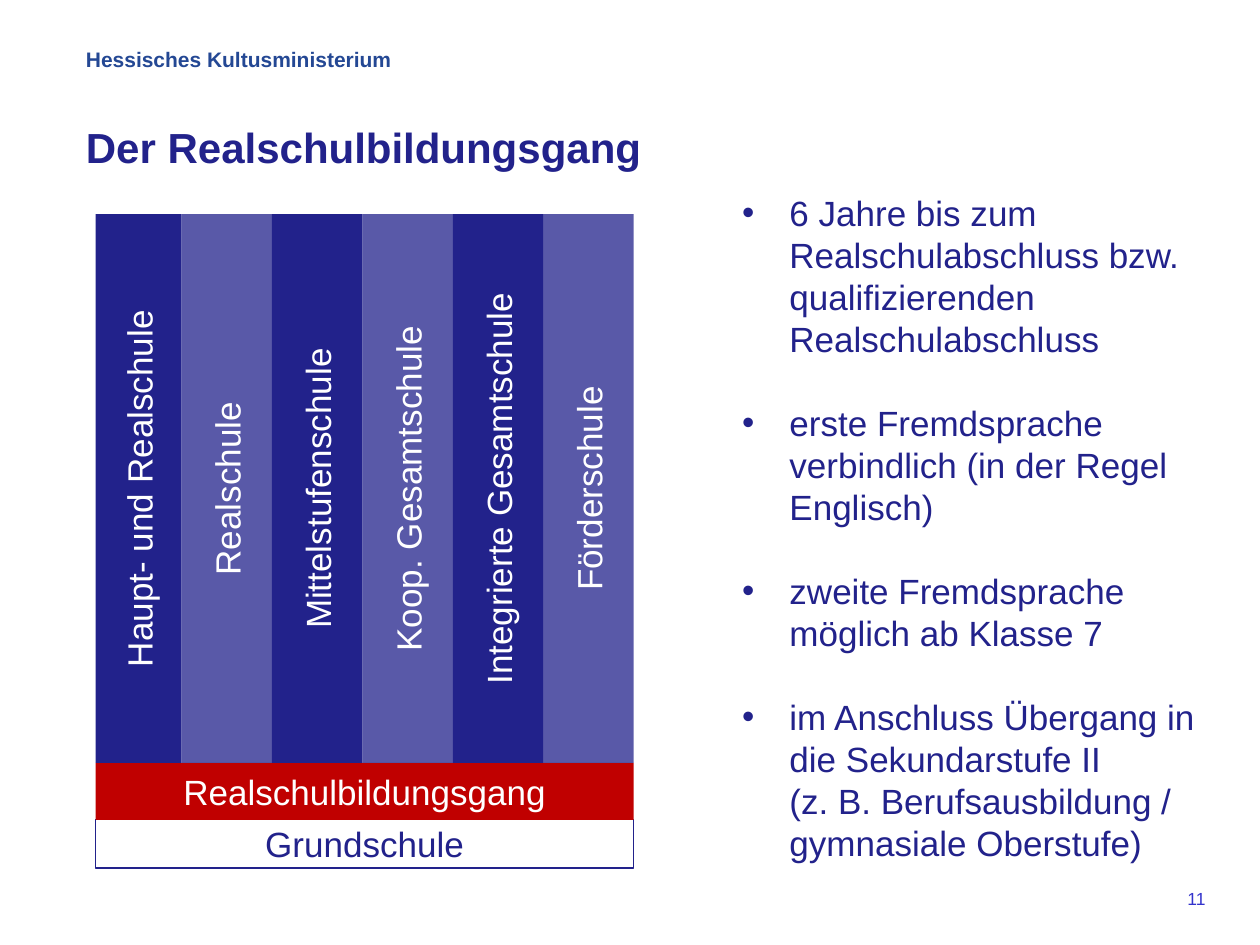
from dataclasses import dataclass

from lxml import etree
from pptx import Presentation
from pptx.dml.color import RGBColor
from pptx.enum.shapes import MSO_SHAPE
from pptx.enum.text import MSO_ANCHOR, PP_ALIGN
from pptx.oxml.ns import qn
from pptx.util import Pt

RECTANGLE = MSO_SHAPE.RECTANGLE
LEFT, CENTER, RIGHT = PP_ALIGN.LEFT, PP_ALIGN.CENTER, PP_ALIGN.RIGHT
TOP, MIDDLE = MSO_ANCHOR.TOP, MSO_ANCHOR.MIDDLE
FONT = "Arial"
NAVY, RED, WHITE = "22228B", "C00000", "FFFFFF"


@dataclass
class Label:
    text: str
    left: float
    top: float
    width: float
    height: float
    size: float
    color: str = NAVY
    bold: bool = False
    align: PP_ALIGN = LEFT


@dataclass
class Block:
    label: Label
    fill: str
    opacity: int = 100
    line: str = ""
    vertical: bool = False


def rgb(color: str) -> RGBColor:
    return RGBColor.from_string(color)


def format_paragraph(paragraph, label: Label) -> None:
    paragraph.alignment = label.align
    for run in paragraph.runs:
        run.font.name = FONT
        run.font.size = Pt(label.size)
        run.font.bold = label.bold
        run.font.color.rgb = rgb(label.color)


def add_label(shapes, label: Label):
    box = shapes.add_textbox(Pt(label.left), Pt(label.top), Pt(label.width), Pt(label.height))
    text_frame = box.text_frame
    text_frame.word_wrap = True
    text_frame.vertical_anchor = TOP
    text_frame.text = label.text
    for paragraph in text_frame.paragraphs:
        format_paragraph(paragraph, label)
    return box


def add_bullets(shapes, label: Label) -> None:
    box = add_label(shapes, label)
    for index, paragraph in enumerate(box.text_frame.paragraphs):
        paragraph.line_spacing = Pt(24)
        if index:
            paragraph.space_before = Pt(24)
        properties = paragraph._p.get_or_add_pPr()
        properties.set("marL", str(Pt(27)))
        properties.set("indent", str(Pt(-27)))
        etree.SubElement(properties, qn("a:buFont")).set("typeface", FONT)
        etree.SubElement(properties, qn("a:buChar")).set("char", "•")


def add_block(shapes, block: Block) -> None:
    label = block.label
    shape = shapes.add_shape(
        RECTANGLE, Pt(label.left), Pt(label.top), Pt(label.width), Pt(label.height)
    )
    shape.shadow.inherit = False
    shape.fill.solid()
    shape.fill.fore_color.rgb = rgb(block.fill)
    if block.opacity < 100:
        color = shape.fill._xPr.find(qn("a:solidFill"))[0]
        etree.SubElement(color, qn("a:alpha")).set("val", str(block.opacity * 1000))
    if block.line:
        shape.line.color.rgb = rgb(block.line)
        shape.line.width = Pt(0.75)
    else:
        shape.line.fill.background()
    text_frame = shape.text_frame
    text_frame.word_wrap = True
    text_frame.vertical_anchor = MIDDLE
    text_frame.text = label.text
    format_paragraph(text_frame.paragraphs[0], label)
    if block.vertical:
        text_frame._txBody.bodyPr.set("vert", "vert270")


# Diagram grid: a slightly narrower first column, then equal ones
SCHOOLS = [
    "Haupt- und Realschule", "Realschule", "Mittelstufenschule",
    "Koop. Gesamtschule", "Integrierte Gesamtschule", "Förderschule",
]
DIAGRAM_LEFT, DIAGRAM_TOP, DIAGRAM_WIDTH = 54.7, 122.4, 307.4
FIRST_WIDTH = 49
COLUMN_WIDTH = (DIAGRAM_WIDTH - FIRST_WIDTH) / (len(SCHOOLS) - 1)
TRACK_TOP, PRIMARY_TOP, DIAGRAM_BOTTOM = 436, 468.5, 496

BULLETS = [
    "6 Jahre bis zum Realschulabschluss bzw. qualifizierenden Realschulabschluss",
    "erste Fremdsprache verbindlich (in der Regel Englisch)",
    "zweite Fremdsprache möglich ab Klasse 7",
    "im Anschluss Übergang in die Sekundarstufe II \v(z. B. Berufsausbildung / gymnasiale Oberstufe)",
]


def add_diagram(shapes) -> None:
    group = shapes.add_group_shape().shapes

    # Base rows
    rows = [
        ("Grundschule", PRIMARY_TOP, DIAGRAM_BOTTOM, NAVY, WHITE, NAVY),
        ("Realschulbildungsgang", TRACK_TOP, PRIMARY_TOP, WHITE, RED, ""),
    ]
    for text, top, bottom, color, fill, line in rows:
        label = Label(text, DIAGRAM_LEFT, top, DIAGRAM_WIDTH, bottom - top, 20, color, align=CENTER)
        add_block(group, Block(label, fill, line=line))

    # School columns in alternating strength
    left = DIAGRAM_LEFT
    for index, school in enumerate(SCHOOLS):
        width = COLUMN_WIDTH if index else FIRST_WIDTH
        label = Label(
            school, left, DIAGRAM_TOP, width, TRACK_TOP - DIAGRAM_TOP, 20, WHITE, align=CENTER
        )
        add_block(group, Block(label, NAVY, opacity=75 if index % 2 else 100, vertical=True))
        left += width


def main() -> None:
    presentation = Presentation()
    presentation.slide_width, presentation.slide_height = Pt(720), Pt(540)
    slide = presentation.slides.add_slide(presentation.slide_layouts[6])
    shapes = slide.shapes

    # Page number, title and header
    add_label(shapes, Label("11", 516, 504, 180, 24, 10, "3333CC", align=RIGHT))
    add_label(shapes, Label("Der Realschulbildungsgang", 42, 66, 612, 90, 24, bold=True))
    add_label(shapes, Label("Hessisches Kultusministerium", 42, 23, 228, 36, 12, "244894", True))

    # Key facts and diagram
    add_bullets(shapes, Label("\n".join(BULLETS), 417, 106, 278, 395, 20))
    add_diagram(shapes)
    presentation.save("out.pptx")


if __name__ == "__main__":
    main()
